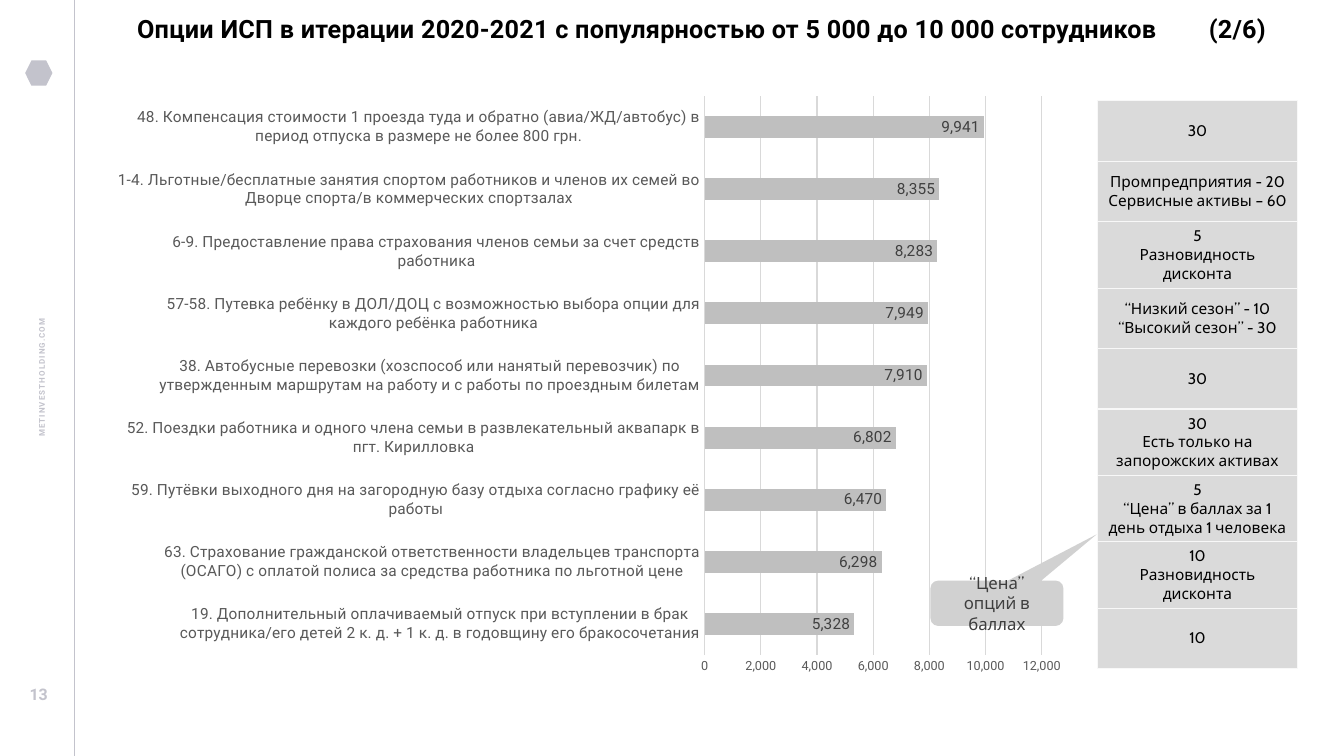
from typing import NamedTuple

from lxml.etree import SubElement
from pptx import Presentation
from pptx.chart.data import CategoryChartData
from pptx.dml.color import RGBColor
from pptx.enum.chart import XL_CHART_TYPE, XL_LABEL_POSITION, XL_TICK_MARK
from pptx.enum.shapes import MSO_CONNECTOR, MSO_SHAPE
from pptx.enum.text import MSO_ANCHOR, PP_ALIGN
from pptx.oxml import parse_xml
from pptx.oxml.ns import nsdecls, qn
from pptx.slide import Slide
from pptx.util import Pt

MUTED = "C3C3CC"
GRID = "D9D9D9"
SHORT_ROW, TALL_ROW = 43.2, 47.4


class Option(NamedTuple):
    title: str
    employees: int
    price: str
    row_height: float = SHORT_ROW


# Benefit options, most popular first
OPTIONS = [
    Option("48. Компенсация стоимости 1 проезда туда и обратно (авиа/ЖД/автобус) в период "
           "отпуска в размере не более 800 грн.", 9941, "30"),
    Option("1-4. Льготные/бесплатные занятия спортом работников и членов их семей во Дворце "
           "спорта/в коммерческих спортзалах", 8355,
           "Промпредприятия - 20\nСервисные активы – 60"),
    Option("6-9. Предоставление права страхования членов семьи за счет средств работника",
           8283, "5\nРазновидность дисконта", TALL_ROW),
    Option("57-58. Путевка ребёнку в ДОЛ/ДОЦ с возможностью выбора опции для каждого ребёнка "
           "работника", 7949, "“Низкий сезон” - 10\n“Высокий сезон” - 30"),
    Option("38. Автобусные перевозки (хозспособ или нанятый перевозчик) по утвержденным "
           "маршрутам на работу и с работы по проездным билетам", 7910, "30"),
    Option("52. Поездки работника и одного члена семьи в развлекательный аквапарк в пгт. "
           "Кирилловка", 6802, "30\nЕсть только на запорожских активах", TALL_ROW),
    Option("59. Путёвки выходного дня на загородную базу отдыха согласно графику её работы",
           6470, "5\n“Цена” в баллах за 1 день отдыха 1 человека", TALL_ROW),
    Option("63. Страхование гражданской ответственности владельцев транспорта (ОСАГО) с "
           "оплатой полиса за средства работника по льготной цене", 6298,
           "10\nРазновидность дисконта", TALL_ROW),
    Option("19. Дополнительный оплачиваемый отпуск при вступлении в брак сотрудника/его детей "
           "2 к. д. + 1 к. д. в годовщину его бракосочетания", 5328, "10"),
]


def color(code: str) -> RGBColor:
    return RGBColor.from_string(code)


def style_font(font, size: float, code: str, family: str = "Roboto", bold: bool = False) -> None:
    font.size, font.name, font.bold = Pt(size), family, bold
    font.color.rgb = color(code)


def write(frame, text: str, *, size: float, code: str, family: str = "Roboto",
          bold: bool = False, align=PP_ALIGN.CENTER, leading: float | None = None,
          tracking: float = 0, tab: float = 0) -> None:
    """Fill a text frame, one paragraph for each line of text."""
    frame.word_wrap = True
    for number, line in enumerate(text.split("\n")):
        paragraph = frame.add_paragraph() if number else frame.paragraphs[0]
        paragraph.alignment = align
        if leading:
            paragraph.line_spacing = leading
        if tab:
            stops = SubElement(paragraph._p.get_or_add_pPr(), qn("a:tabLst"))
            SubElement(stops, qn("a:tab"), pos=str(Pt(tab)), algn="l")
        run = paragraph.add_run()
        run.text = line
        style_font(run.font, size, code, family, bold)
        if tracking:
            run._r.get_or_add_rPr().set("spc", str(round(tracking * 100)))


def add_text(slide: Slide, text: str, left: float, top: float, width: float, height: float,
             *, inset: bool = False, anchor=MSO_ANCHOR.TOP, rotation: float = 0, **style) -> None:
    box = slide.shapes.add_textbox(Pt(left), Pt(top), Pt(width), Pt(height))
    box.rotation = rotation
    frame = box.text_frame
    frame.vertical_anchor = anchor
    if not inset:
        frame.margin_left = frame.margin_right = frame.margin_top = frame.margin_bottom = 0
    write(frame, text, **style)


def add_block(slide: Slide, preset, left: float, top: float, width: float, height: float,
              code: str):
    block = slide.shapes.add_shape(preset, Pt(left), Pt(top), Pt(width), Pt(height))
    block.shadow.inherit = False
    block.fill.solid()
    block.fill.fore_color.rgb = color(code)
    block.line.fill.background()
    return block


def add_sidebar(slide: Slide) -> None:
    add_block(slide, MSO_SHAPE.HEXAGON, 18, 43.2, 19.5, 18, MUTED)
    add_text(slide, "METINVESTHOLDING.COM", -187.2, 260, 430.6, 19.4, rotation=270,
             anchor=MSO_ANCHOR.MIDDLE, size=5.7, code=MUTED, bold=True,
             leading=1.5, tracking=0.8)
    divider = slide.shapes.add_connector(MSO_CONNECTOR.STRAIGHT, Pt(53.3), Pt(540), Pt(53.3), 0)
    divider.line.color.rgb = color(MUTED)
    divider.line.width = Pt(0.5)
    SubElement(divider._element.spPr, qn("a:effectLst"))
    add_text(slide, "13", 0, 485.3, 55.4, 20.9, inset=True, size=11.4, code=MUTED, bold=True)


def add_popularity_chart(slide: Slide) -> None:
    data = CategoryChartData(number_format="#,##0")
    ascending = OPTIONS[::-1]
    data.categories = [option.title for option in ascending]
    data.add_series("Сотрудники", [option.employees for option in ascending])
    chart = slide.shapes.add_chart(XL_CHART_TYPE.BAR_CLUSTERED, Pt(79.9), Pt(60.5),
                                   Pt(691.9), Pt(429.8), data).chart
    chart.has_legend = chart.has_title = False
    style_font(chart.font, 10, "000000")

    # Bars and their values
    plot = chart.plots[0]
    plot.gap_width = 182
    plot.vary_by_categories = False
    bars = plot.series[0].format.fill
    bars.solid()
    bars.fore_color.rgb = color("BFBFBF")
    plot.has_data_labels = True
    labels = plot.data_labels
    labels.show_value = True
    labels.position = XL_LABEL_POSITION.INSIDE_END
    labels.number_format, labels.number_format_is_linked = "#,##0", False
    style_font(labels.font, 11, "404040")

    # Axes
    titles, counts = chart.category_axis, chart.value_axis
    for axis, size in ((titles, 11), (counts, 9)):
        axis.major_tick_mark = axis.minor_tick_mark = XL_TICK_MARK.NONE
        style_font(axis.tick_labels.font, size, "595959")
    counts.minimum_scale, counts.maximum_scale, counts.major_unit = 0, 12000, 2000
    counts.tick_labels.number_format = "#,##0"
    counts.tick_labels.number_format_is_linked = False
    counts.format.line.fill.background()
    counts.has_major_gridlines = True
    for line in (titles.format.line, counts.major_gridlines.format.line):
        line.color.rgb = color(GRID)
        line.width = Pt(0.75)

    # Plot area as shares of the chart frame
    area = chart._chartSpace.chart.plotArea
    for layout in area.findall(qn("c:layout")):
        area.remove(layout)
    shares = "".join(f'<c:{key} val="{share}"/>' for key, share in
                     (("x", 0.612), ("y", 0.019), ("w", 0.348), ("h", 0.929)))
    area.insert(0, parse_xml(
        f'<c:layout {nsdecls("c")}><c:manualLayout><c:layoutTarget val="inner"/>'
        f'<c:xMode val="edge"/><c:yMode val="edge"/>{shares}</c:manualLayout></c:layout>'))


def add_price_table(slide: Slide) -> None:
    height = sum(option.row_height for option in OPTIONS)
    table = slide.shapes.add_table(len(OPTIONS), 1, Pt(784.1), Pt(72), Pt(142.6),
                                   Pt(height)).table
    table.first_row = table.horz_banding = False
    for number, option in enumerate(OPTIONS):
        table.rows[number].height = Pt(option.row_height)
        cell = table.cell(number, 0)
        cell.vertical_anchor = MSO_ANCHOR.MIDDLE
        write(cell.text_frame, option.price, size=11, code="000000", family="Cabin")
        properties = cell._tc.get_or_add_tcPr()
        for side in ("lnL", "lnR", "lnT", "lnB"):
            properties.append(parse_xml(
                f'<a:{side} {nsdecls("a")} w="{Pt(1)}"><a:solidFill>'
                f'<a:srgbClr val="F8F8F8"/></a:solidFill></a:{side}>'))
        cell.fill.solid()
        cell.fill.fore_color.rgb = color("DADADA")


def add_price_callout(slide: Slide) -> None:
    callout = add_block(slide, MSO_SHAPE.ROUNDED_RECTANGULAR_CALLOUT,
                        664.6, 414.7, 95, 32.4, "D1D1D1")
    for number, value in enumerate((0.75, -1.52, 0.17)):
        callout.adjustments[number] = value
    callout.text_frame.vertical_anchor = MSO_ANCHOR.MIDDLE
    write(callout.text_frame, "“Цена” опций в баллах", size=12, code="3E3E3E", family="Cabin")


def main() -> None:
    deck = Presentation()
    deck.slide_width, deck.slide_height = Pt(960), Pt(540)
    slide = deck.slides.add_slide(deck.slide_layouts[6])
    add_sidebar(slide)
    add_popularity_chart(slide)
    add_text(slide, "Опции ИСП в итерации 2020-2021 с популярностью от 5 000 до 10 000 "
             "сотрудников\t(2/6)", 97.9, 9.4, 828.7, 51.1, size=18, code="000000",
             bold=True, align=PP_ALIGN.LEFT, tracking=0.2, tab=765.5)
    add_price_table(slide)
    add_price_callout(slide)
    deck.save("out.pptx")


if __name__ == "__main__":
    main()
